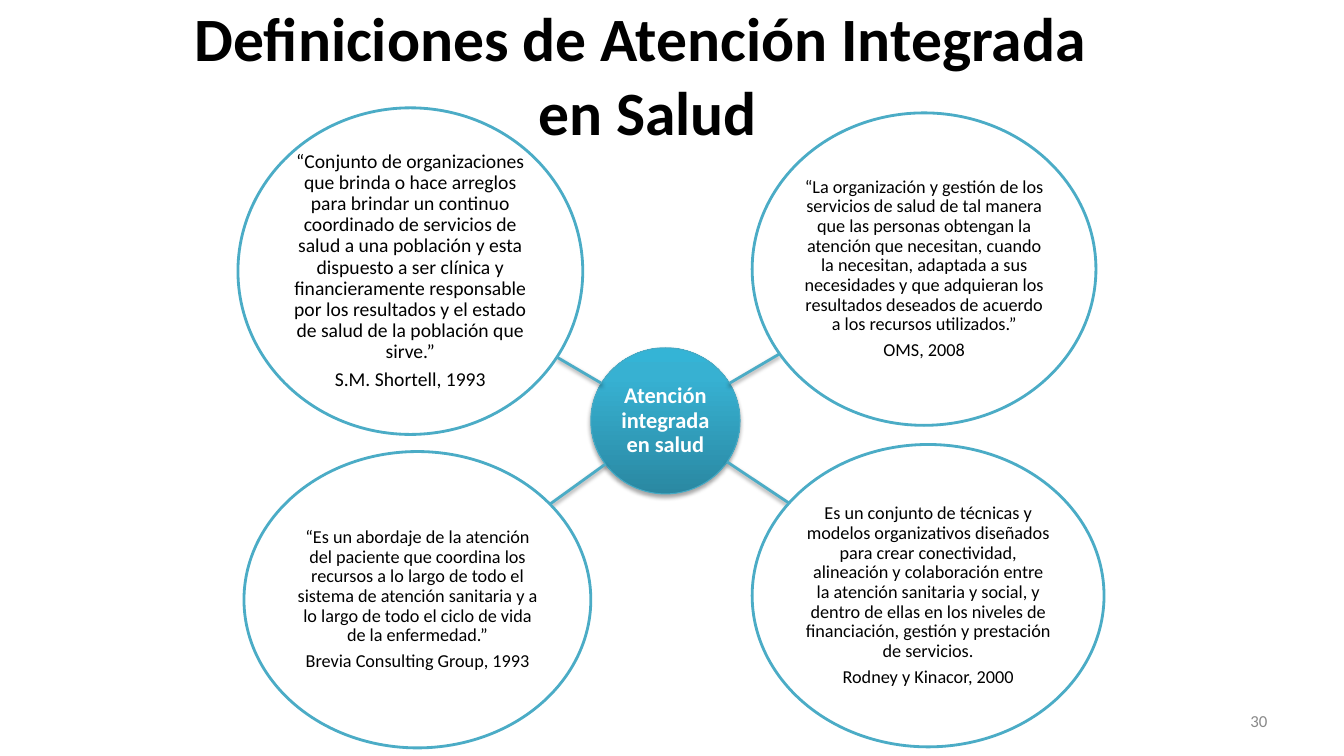
from collections import namedtuple
from math import hypot

from lxml import etree
from pptx import Presentation
from pptx.dml.color import RGBColor
from pptx.enum.shapes import MSO_CONNECTOR, MSO_SHAPE
from pptx.enum.text import MSO_ANCHOR, MSO_AUTO_SIZE, PP_ALIGN
from pptx.oxml import parse_xml
from pptx.oxml.ns import nsdecls, qn
from pptx.util import Inches, Pt

CENTER, RIGHT = PP_ALIGN.CENTER, PP_ALIGN.RIGHT
MIDDLE = MSO_ANCHOR.MIDDLE
OVAL = MSO_SHAPE.OVAL
STRAIGHT = MSO_CONNECTOR.STRAIGHT
NO_FIT = MSO_AUTO_SIZE.NONE

FONT = "Calibri"
COLORS = {
    "text": "000000", "white": "FFFFFF", "number": "898989",
    "ring": "4BACC6", "hub_line": "46AAC5",
    "hub_dark": "2A88A2", "hub_light": "37B1D2", "hub_top": "34B4D6",
}
Box = namedtuple("Box", "left top width height")

# Each quote: place inside the diagram, text size, quotation, author
QUOTES = [
    (Box(5.1, 0.05, 3.41, 3.1), 13,
     "“La organización y gestión de los servicios de salud de tal manera que las "
     "personas obtengan la atención que necesitan, cuando la necesitan, adaptada a "
     "sus necesidades y que adquieran los resultados deseados de acuerdo a los "
     "recursos utilizados.”", "OMS, 2008"),
    (Box(5.1, 3.34, 3.49, 3), 13,
     "Es un conjunto de técnicas y modelos organizativos diseñados para crear "
     "conectividad, alineación y colaboración entre la atención sanitaria y social, "
     "y dentro de ellas en los niveles de financiación, gestión y prestación de "
     "servicios.", "Rodney y Kinacor, 2000"),
    (Box(0.06, 3.41, 3.44, 2.94), 13,
     "“Es un abordaje de la atención del paciente que coordina los recursos a lo "
     "largo de todo el sistema de atención sanitaria y a lo largo de todo el ciclo "
     "de vida de la enfermedad.”", "Brevia Consulting Group, 1993"),
    (Box(0, 0, 3.42, 3.24), 14,
     "“Conjunto de organizaciones que brinda o hace arreglos para brindar un "
     "continuo coordinado de servicios de salud a una población y esta dispuesto a "
     "ser clínica y financieramente responsable por los resultados y el estado de "
     "salud de la población que sirve.”", "S.M. Shortell, 1993"),
]
HUB = Box(3.5, 2.38, 1.48, 1.45)


def rgb(name):
    return RGBColor.from_string(COLORS[name])


def inches(values):
    return [Inches(value) for value in values]


def inside(region, box):
    return box._replace(left=region.left + box.left, top=region.top + box.top)


def write(frame, paragraphs, size, color="text", bold=False, align=CENTER,
          inset=0.01, line_spacing=None, space_after=0):
    frame.word_wrap = True
    frame.auto_size = NO_FIT
    frame.vertical_anchor = MIDDLE
    frame.margin_left = frame.margin_right = Inches(inset)
    frame.margin_top = frame.margin_bottom = Inches(inset)
    frame.text = "\n".join(paragraphs)
    for para in frame.paragraphs:
        para.alignment = align
        para.line_spacing = line_spacing
        para.space_after = Pt(space_after)
        for span in para.runs:
            span.font.name = FONT
            span.font.size = Pt(size)
            span.font.bold = bold
            span.font.color.rgb = rgb(color)


def add_shadow(shape, distance, opacity):
    properties = shape._element.spPr
    for effects in properties.findall(qn("a:effectLst")):
        properties.remove(effects)
    properties.append(parse_xml(
        f'<a:effectLst {nsdecls("a")}><a:outerShdw blurRad="{Pt(3.1)}" '
        f'dist="{Pt(distance)}" dir="5400000" rotWithShape="0">'
        f'<a:srgbClr val="000000"><a:alpha val="{opacity * 1000}"/></a:srgbClr>'
        '</a:outerShdw></a:effectLst>'))


def add_circle(page, box, line_color, line_width):
    circle = page.shapes.add_shape(OVAL, *inches(box))
    circle.shadow.inherit = False
    circle.fill.solid()
    circle.fill.fore_color.rgb = rgb("white")
    circle.line.color.rgb = rgb(line_color)
    circle.line.width = Pt(line_width)
    return circle


def center(box):
    return box.left + box.width / 2, box.top + box.height / 2


def edge_point(box, target):
    """Point where the oval's outline meets the line to the target."""
    x, y = center(box)
    across, down = target[0] - x, target[1] - y
    share = 1 / hypot(across / (box.width / 2), down / (box.height / 2))
    return x + across * share, y + down * share


def add_spoke(page, hub, quote):
    start, end = edge_point(hub, center(quote)), edge_point(quote, center(hub))
    spoke = page.shapes.add_connector(STRAIGHT, *inches(start + end))
    spoke.line.color.rgb = rgb("ring")
    spoke.line.width = Pt(2)
    add_shadow(spoke, distance=1.6, opacity=38)


def add_hub(page, box):
    hub = add_circle(page, box, "hub_line", 0.75)
    properties = hub._element.spPr
    gradient = parse_xml(f'<a:gradFill {nsdecls("a")} rotWithShape="1"><a:gsLst/>'
                         '<a:lin ang="16200000" scaled="0"/></a:gradFill>')
    for position, name in ((0, "hub_dark"), (80, "hub_light"), (100, "hub_top")):
        stop = etree.SubElement(gradient[0], qn("a:gs"), pos=str(position * 1000))
        etree.SubElement(stop, qn("a:srgbClr"), val=COLORS[name])
    properties.replace(properties.find(qn("a:solidFill")), gradient)
    add_shadow(hub, distance=1.8, opacity=35)
    write(hub.text_frame, ["Atención integrada en salud"], 16, color="white",
          bold=True, line_spacing=0.9)


def add_diagram(page, region):
    hub = inside(region, HUB)
    add_hub(page, hub)
    for place, size, quotation, author in QUOTES:
        box = inside(region, place)
        add_spoke(page, hub, box)
        circle = add_circle(page, box, "ring", 2)
        write(circle.text_frame, [quotation, author], size,
              line_spacing=0.9, space_after=0.35 * size)


def add_title(page, box):
    title = page.shapes.title
    title.left, title.top, title.width, title.height = inches(box)
    write(title.text_frame, ["Definiciones de Atención Integrada \ven Salud"], 44,
          bold=True, inset=0.05)
    # Raises the two lines above the middle of the box
    title.text_frame.margin_bottom = Inches(0.72)


def add_page_number(page, box):
    number = page.shapes.add_textbox(*inches(box))
    write(number.text_frame, ["30"], 12, color="number", align=RIGHT, inset=0.1)


def main():
    deck = Presentation()
    deck.slide_width, deck.slide_height = Inches(13.33), Inches(7.5)
    page = deck.slides.add_slide(deck.slide_layouts.get_by_name("Title Only"))
    add_title(page, Box(1.67, 0.44, 9.51, 1.25))
    add_diagram(page, Box(2.36, 1.07, 8.59, 6.35))
    add_page_number(page, Box(9.56, 6.95, 3.11, 0.4))
    deck.save("out.pptx")


if __name__ == "__main__":
    main()
